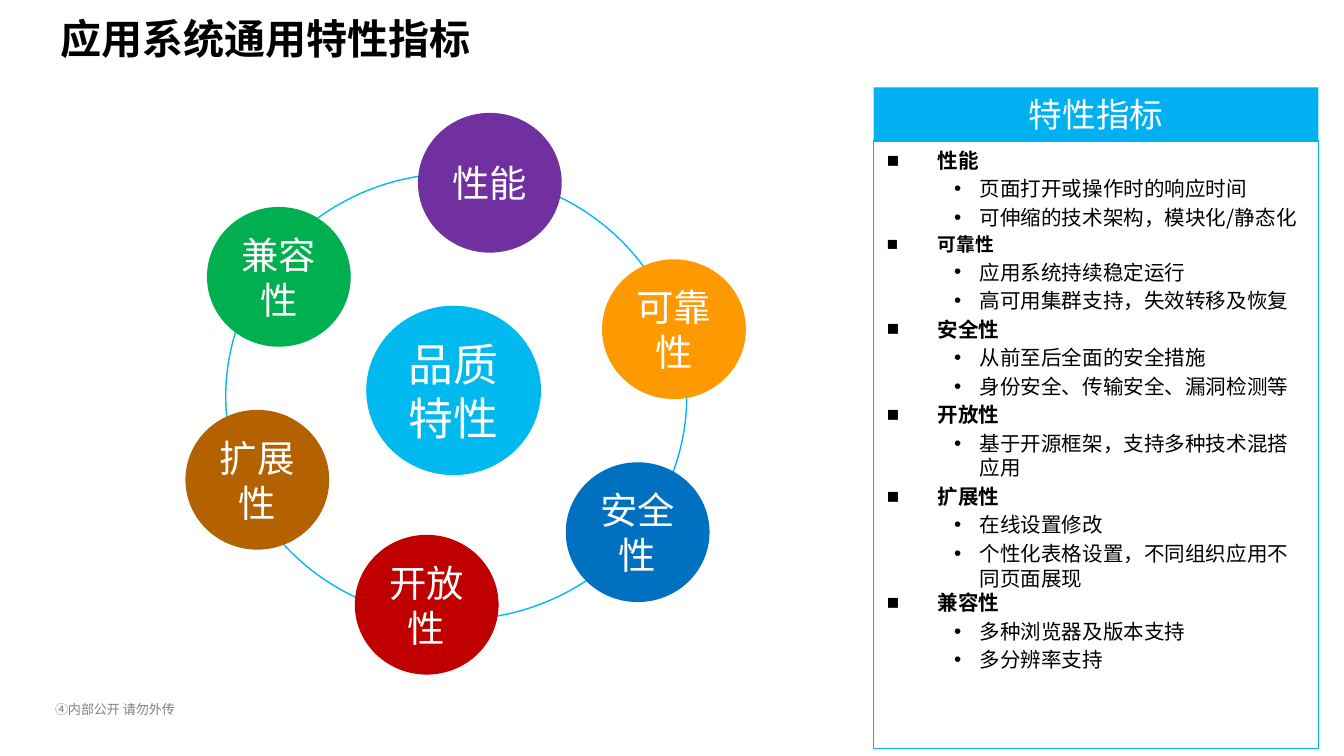
from dataclasses import dataclass

from lxml.etree import SubElement
from pptx import Presentation
from pptx.dml.color import RGBColor
from pptx.enum.shapes import MSO_SHAPE as Shape
from pptx.enum.text import MSO_ANCHOR as Anchor, PP_ALIGN as Align
from pptx.oxml.ns import qn
from pptx.util import Inches, Pt


@dataclass(frozen=True)
class Theme:
    font: str = "Noto Sans CJK SC"
    black: str = "000000"
    white: str = "FFFFFF"
    gray: str = "808080"
    header: str = "00B0F0"
    ring: str = "00B9EF"
    title_size: int = 22
    header_size: int = 18
    core_size: int = 24
    trait_size: int = 20
    list_size: int = 11
    note_size: int = 7
    line_width: float = 0.75
    line_ratio: float = 1.2


THEME = Theme()

TRAIT_SIZE = (1.07, 1.04)
TRAITS = [
    ("安全性", 4.21, 3.44, "0070C0"),
    ("可靠性", 4.48, 1.93, "FF9900"),
    ("兼容性", 1.54, 1.54, "00B050"),
    ("性能", 3.11, 0.84, "7030A0"),
    ("开放性", 2.64, 3.98, "C00000"),
    ("扩展性", 1.38, 3.05, "B46200"),
]

INDICATORS = [
    ("性能", ["页面打开或操作时的响应时间", "可伸缩的技术架构，模块化/静态化"]),
    ("可靠性", ["应用系统持续稳定运行", "高可用集群支持，失效转移及恢复"]),
    ("安全性", ["从前至后全面的安全措施", "身份安全、传输安全、漏洞检测等"]),
    ("开放性", ["基于开源框架，支持多种技术混搭应用"]),
    ("扩展性", ["在线设置修改", "个性化表格设置，不同组织应用不同页面展现"]),
    ("兼容性", ["多种浏览器及版本支持", "多分辨率支持"]),
]


def write(paragraph, text, *, size, color=THEME.black, bold=False,
          align=Align.LEFT, spacing=None, before=0):
    paragraph.alignment = align
    paragraph.space_before = Pt(before)
    if spacing:
        paragraph.line_spacing = Pt(spacing)
    run = paragraph.add_run()
    run.text = text
    run.font.name = THEME.font
    run.font.size = Pt(size)
    run.font.bold = bold
    run.font.color.rgb = RGBColor.from_string(color)
    SubElement(run._r.get_or_add_rPr(), qn("a:ea"), typeface=THEME.font)


def line_height(size):
    return round(size * THEME.line_ratio, 1)


def set_frame(frame, anchor, insets):
    frame.word_wrap = True
    frame.vertical_anchor = anchor
    (frame.margin_left, frame.margin_top,
     frame.margin_right, frame.margin_bottom) = map(Inches, insets)


def add_label(slide, box, text, insets=(0.1, 0.05, 0.1, 0.05), **style):
    label = slide.shapes.add_textbox(*map(Inches, box))
    set_frame(label.text_frame, Anchor.MIDDLE, insets)
    write(label.text_frame.paragraphs[0], text, **style)


def add_figure(slide, kind, box, fill=None, line=None):
    figure = slide.shapes.add_shape(kind, *map(Inches, box))
    figure.shadow.inherit = False
    if fill:
        figure.fill.solid()
        figure.fill.fore_color.rgb = RGBColor.from_string(fill)
    else:
        figure.fill.background()
    if line:
        figure.line.color.rgb = RGBColor.from_string(line)
        figure.line.width = Pt(THEME.line_width)
    else:
        figure.line.fill.background()
    return figure


def add_circle(slide, box, text, fill, size, line=None):
    frame = add_figure(slide, Shape.OVAL, box, fill, line).text_frame
    set_frame(frame, Anchor.MIDDLE, (0, 0, 0, 0))
    write(frame.paragraphs[0], text, size=size, color=THEME.white,
          align=Align.CENTER, spacing=line_height(size))


def add_bullet(paragraph, mark, margin, hanging):
    properties = paragraph._p.get_or_add_pPr()
    properties.set("marL", str(Inches(margin)))
    properties.set("indent", str(-Inches(hanging)))
    SubElement(properties, qn("a:buFont"), typeface="Arial")
    SubElement(properties, qn("a:buChar"), char=mark)


def add_indicators(slide, box):
    panel = add_figure(slide, Shape.RECTANGLE, box, THEME.white, THEME.header)
    frame = panel.text_frame
    set_frame(frame, Anchor.TOP, (0.1, 0.05, 0.1, 0.05))
    for trait, details in INDICATORS:
        first = trait == INDICATORS[0][0]
        last = trait == INDICATORS[-1][0]
        heading = frame.paragraphs[0] if first else frame.add_paragraph()
        add_bullet(heading, "■", 0.38, 0.38)
        size = THEME.list_size - 1 if trait == "可靠性" else THEME.list_size
        write(heading, trait, size=size, bold=True, spacing=line_height(size),
              before=0 if first or last else 2)
        for detail in details:
            item = frame.add_paragraph()
            item.level = 1
            add_bullet(item, "•", 0.69, 0.19)
            write(item, detail, size=THEME.list_size,
                  spacing=line_height(THEME.list_size), before=2.1)


def add_panel_header(slide, box, text):
    frame = add_figure(slide, Shape.RECTANGLE, box, THEME.header).text_frame
    set_frame(frame, Anchor.TOP, (0.1, 0.05, 0.1, 0.05))
    write(frame.paragraphs[0], text, size=THEME.header_size, color=THEME.white,
          align=Align.CENTER, spacing=line_height(THEME.header_size))


def main():
    deck = Presentation()
    deck.slide_width = Inches(10)
    deck.slide_height = deck.slide_width * 9 // 16
    slide = deck.slides.add_slide(deck.slide_layouts[6])

    add_label(slide, (0.35, 5.13, 1.77, 0.27), "④内部公开 请勿外传",
              insets=(0.06, 0.01, 0.06, 0.01), size=THEME.note_size,
              color=THEME.gray, spacing=10.5)
    add_label(slide, (0.35, 0, 7.8, 0.57), "应用系统通用特性指标",
              size=THEME.title_size, bold=True)

    add_panel_header(slide, (6.5, 0.65, 3.31, 0.4), "特性指标")
    add_indicators(slide, (6.5, 1.05, 3.31, 4.52))

    add_figure(slide, Shape.OVAL, (1.68, 1.29, 3.43, 3.32), line=THEME.ring)
    add_circle(slide, (2.73, 2.28, 1.29, 1.25), "品质特性", THEME.ring,
               THEME.core_size, line=THEME.ring)
    for trait, left, top, color in TRAITS:
        add_circle(slide, (left, top, *TRAIT_SIZE), trait, color,
                   THEME.trait_size)

    deck.save("out.pptx")


if __name__ == "__main__":
    main()
